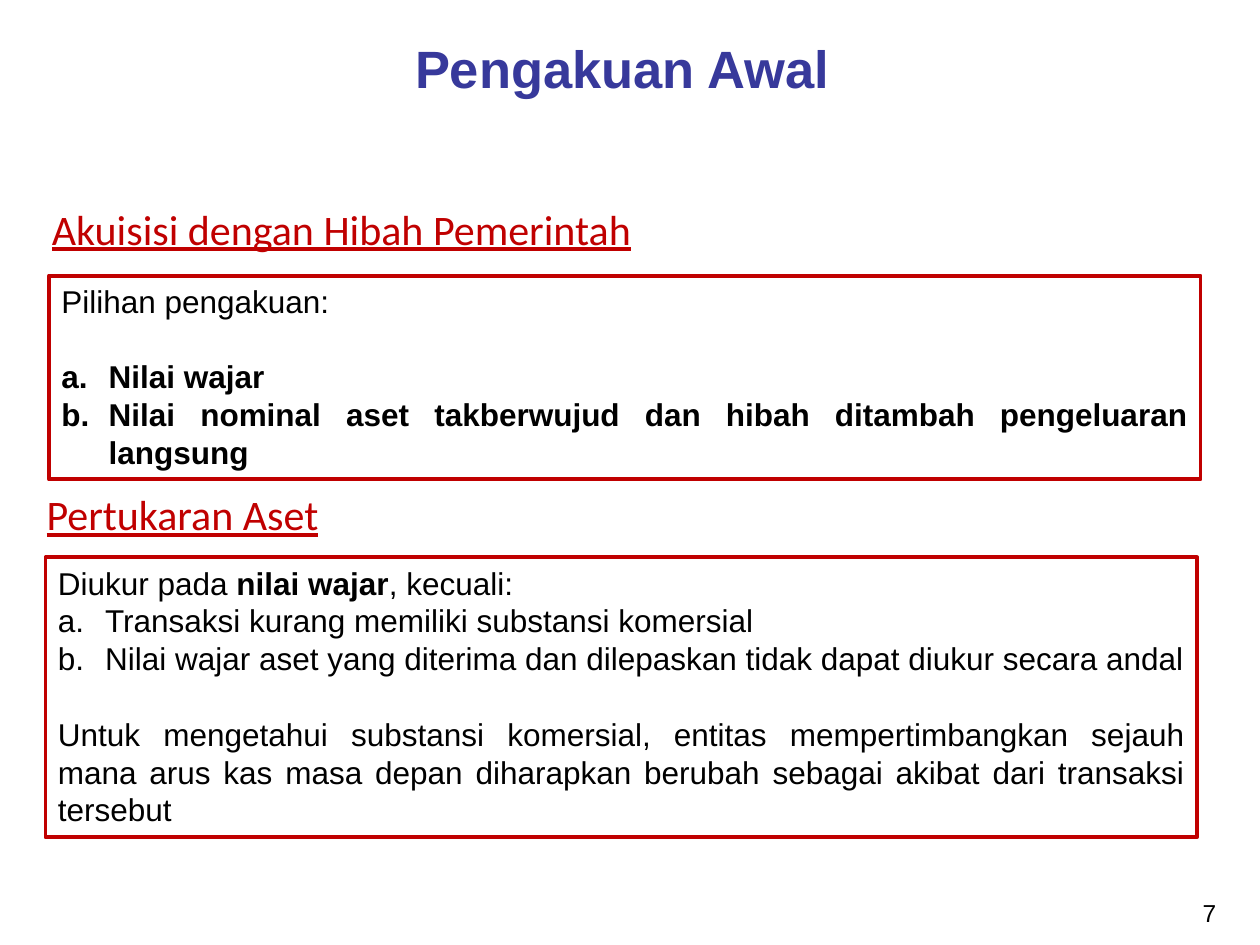
from dataclasses import dataclass

from pptx import Presentation
from pptx.dml.color import RGBColor as Rgb
from pptx.enum.shapes import MSO_SHAPE as Shape
from pptx.enum.text import MSO_ANCHOR as Anchor, PP_ALIGN as Align
from pptx.oxml.xmlchemy import OxmlElement as Element
from pptx.util import Pt


@dataclass(frozen=True)
class Theme:
    navy: Rgb = Rgb(0x37, 0x39, 0x9B)
    red: Rgb = Rgb(0xC0, 0x00, 0x00)
    black: Rgb = Rgb(0, 0, 0)
    sans: str = "Arial"
    head: str = "Calibri"
    title: int = 30
    topic: int = 24
    body: int = 18
    small: int = 14
    line: float = 21.6
    indent: int = 27
    border: float = 2.25


THEME = Theme()


def style(para, face, size, color, bold=False, under=False):
    font = para.font
    font.name, font.size, font.bold = face, Pt(size), bold
    font.underline = under
    font.color.rgb = color


def add_text(slide, box, text, align=Align.LEFT, **look):
    """Add a one-line text box at box (left, top, width, height)."""
    frame = slide.shapes.add_textbox(*map(Pt, box)).text_frame
    frame.word_wrap = True
    frame.vertical_anchor = Anchor.MIDDLE
    para = frame.paragraphs[0]
    para.text, para.alignment = text, align
    style(para, **look)


def number(para):
    """Letter the paragraph a., b., ... with a hanging indent."""
    props = para._p.get_or_add_pPr()
    props.set("marL", str(Pt(THEME.indent)))
    props.set("indent", str(-Pt(THEME.indent)))
    mark = Element("a:buAutoNum")
    mark.set("type", "alphaLcPeriod")
    props.append(mark)


def add_panel(slide, box, items):
    """Add a framed box; each item is (parts, options), odd parts bold."""
    panel = slide.shapes.add_shape(Shape.RECTANGLE, *map(Pt, box))
    panel.shadow.inherit = False
    panel.fill.background()
    panel.line.color.rgb = THEME.red
    panel.line.width = Pt(THEME.border)
    frame = panel.text_frame
    frame.word_wrap = True
    frame.vertical_anchor = Anchor.TOP
    for i, (parts, opts) in enumerate(items):
        para = frame.add_paragraph() if i else frame.paragraphs[0]
        para.alignment = Align.JUSTIFY if opts.get("just") else Align.LEFT
        para.line_spacing = Pt(THEME.line)
        if opts.get("gap"):
            para.space_before = Pt(THEME.line)
        if opts.get("list"):
            number(para)
        style(para, THEME.sans, THEME.body, THEME.black, opts.get("bold", False))
        for j, part in enumerate(parts):
            run = para.add_run()
            run.text = part
            if j % 2:
                run.font.bold = True


def add_topic(slide, head, box, text, items):
    """Add an underlined heading and the panel below it."""
    add_text(slide, head, text, face=THEME.head, size=THEME.topic,
             color=THEME.red, under=True)
    add_panel(slide, box, items)


def main():
    deck = Presentation()
    deck.slide_width, deck.slide_height = Pt(720), Pt(540)
    slide = deck.slides.add_slide(deck.slide_layouts[6])

    add_text(slide, (28, 16, 655, 45), "Pengakuan Awal", Align.CENTER,
             face=THEME.sans, size=THEME.title, color=THEME.navy, bold=True)
    add_topic(
        slide, (22.5, 112.5, 444, 36), (28, 157.5, 658, 116.5),
        "Akuisisi dengan Hibah Pemerintah",
        [(["Pilihan pengakuan:"], {}),
         (["Nilai wajar"], dict(list=True, bold=True, just=True, gap=True)),
         (["Nilai nominal aset takberwujud dan hibah ditambah "
           "pengeluaran langsung"], dict(list=True, bold=True, just=True))])
    add_topic(
        slide, (19.5, 275.5, 572, 36), (26, 318.5, 658, 160),
        "Pertukaran Aset",
        [(["Diukur pada ", "nilai wajar", ", kecuali:"], {}),
         (["Transaksi kurang memiliki substansi komersial"], dict(list=True)),
         (["Nilai wajar aset yang diterima dan dilepaskan tidak dapat "
           "diukur secara andal"], dict(list=True)),
         (["Untuk mengetahui substansi komersial, entitas mempertimbangkan "
           "sejauh mana arus kas masa depan diharapkan berubah sebagai "
           "akibat dari transaksi tersebut"], dict(just=True, gap=True))])
    add_text(slide, (534, 509, 168, 25), "7", Align.RIGHT,
             face=THEME.sans, size=THEME.small, color=THEME.black)
    deck.save("out.pptx")


if __name__ == "__main__":
    main()
